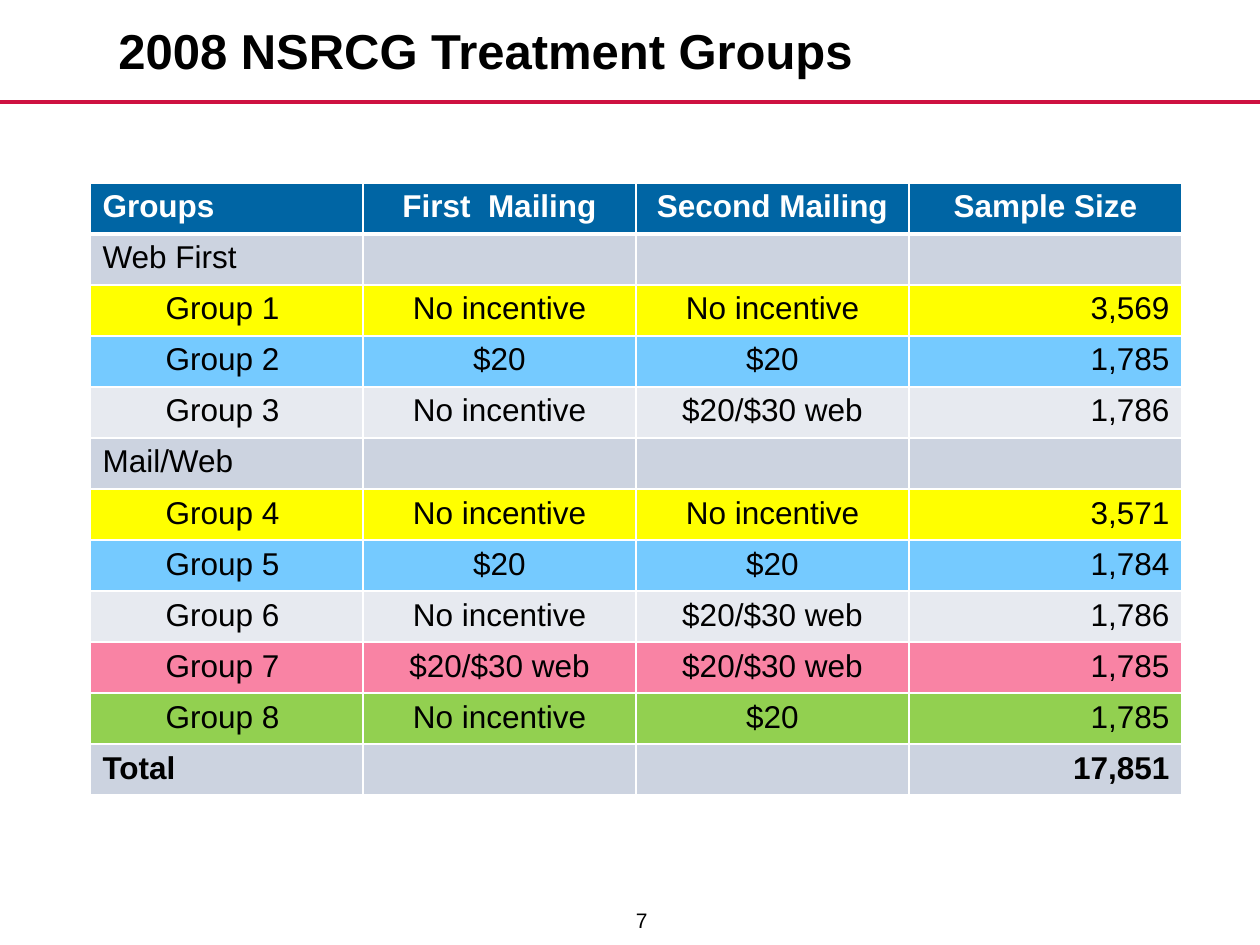
from lxml import etree
from pptx import Presentation
from pptx.dml.color import RGBColor
from pptx.enum.shapes import MSO_CONNECTOR
from pptx.enum.text import MSO_ANCHOR, PP_ALIGN
from pptx.oxml.ns import qn
from pptx.util import Pt

LEFT, CENTER, RIGHT = PP_ALIGN.LEFT, PP_ALIGN.CENTER, PP_ALIGN.RIGHT
MIDDLE = MSO_ANCHOR.MIDDLE
STRAIGHT = MSO_CONNECTOR.STRAIGHT
EMU_PER_PX = 914400 / 126

COLORS = {
    "black": "000000",
    "white": "FFFFFF",
    "rule": "CE1141",
    "header": "0065A4",
    "section": "CCD3E0",
    "plain": "E7EAF0",
    "yellow": "FFFF00",
    "blue": "75CAFF",
    "pink": "F983A4",
    "green": "92D050",
}

NONE, CASH, WEB_BONUS = "No incentive", "$20", "$20/$30 web"
ROWS = [
    ("header", "Groups", "First  Mailing", "Second Mailing", "Sample Size"),
    ("section", "Web First", "", "", ""),
    ("yellow", "Group 1", NONE, NONE, "3,569"),
    ("blue", "Group 2", CASH, CASH, "1,785"),
    ("plain", "Group 3", NONE, WEB_BONUS, "1,786"),
    ("section", "Mail/Web", "", "", ""),
    ("yellow", "Group 4", NONE, NONE, "3,571"),
    ("blue", "Group 5", CASH, CASH, "1,784"),
    ("plain", "Group 6", NONE, WEB_BONUS, "1,786"),
    ("pink", "Group 7", WEB_BONUS, WEB_BONUS, "1,785"),
    ("green", "Group 8", NONE, CASH, "1,785"),
    ("section", "Total", "", "", "17,851"),
]


def px(length):
    return round(length * EMU_PER_PX)


def rgb(name):
    return RGBColor.from_string(COLORS[name])


class SlideBuilder:
    font_name = "Arial"

    def __init__(self, slide):
        self.slide = slide

    def add_words(self, paragraph, text, color="black", align=LEFT, **format_values):
        paragraph.alignment = align
        run = paragraph.add_run()
        run.text = text
        run.font.color.rgb = rgb(color)
        for name, value in {"name": self.font_name, **format_values}.items():
            setattr(run.font, name, value)

    def text(self, box, text, **format_values):
        shape = self.slide.shapes.add_textbox(*map(px, box))
        frame = shape.text_frame
        frame.word_wrap = True
        frame.vertical_anchor = MIDDLE
        self.add_words(frame.paragraphs[0], text, **format_values)

    def line(self, start, end, color, width):
        shape = self.slide.shapes.add_connector(STRAIGHT, *map(px, start + end))
        shape.line.color.rgb = rgb(color)
        shape.line.width = Pt(width)
        etree.SubElement(shape._element.spPr, qn("a:effectLst"))

    def borders(self, cell, widths):
        properties = cell._tc.get_or_add_tcPr()
        for side, width in widths.items():
            line = etree.SubElement(properties, qn(f"a:ln{side}"), w=str(Pt(width)))
            fill = etree.SubElement(line, qn("a:solidFill"))
            etree.SubElement(fill, qn("a:srgbClr"), val=COLORS["white"])

    def table(self, left, top, column_width, row_height, rows):
        columns = len(rows[0]) - 1
        table = self.slide.shapes.add_table(
            len(rows), columns, px(left), px(top),
            px(column_width * columns), px(row_height * len(rows))).table
        for column in table.columns:
            column.width = px(column_width)
        for row_index, (color, *texts) in enumerate(rows):
            table.rows[row_index].height = px(row_height)
            header = row_index == 0
            aligns = (LEFT, CENTER, CENTER, CENTER if header else RIGHT)
            for column_index, (text, align) in enumerate(zip(texts, aligns)):
                cell = table.cell(row_index, column_index)
                self.borders(cell, {
                    "L": 1, "R": 1,
                    "T": 3 if row_index == 1 else 1,
                    "B": 3 if header else 1,
                })
                cell.fill.solid()
                cell.fill.fore_color.rgb = rgb(color)
                paragraph = cell.text_frame.paragraphs[0]
                if text.startswith("Group "):
                    paragraph.level = 1
                    paragraph._p.get_or_add_pPr().set("marL", str(px(63)))
                if text:
                    self.add_words(paragraph, text, "white" if header else "black", align,
                                   size=Pt(18), bold=header or texts[0] == "Total")


def main():
    presentation = Presentation()
    presentation.slide_width = px(1260)
    presentation.slide_height = px(945)
    slide = presentation.slides.add_slide(presentation.slide_layouts[6])
    builder = SlideBuilder(slide)
    builder.line((0, 102), (1260, 102), "rule", 2)
    builder.table(90, 183, 273, 51, ROWS)
    builder.text((106, 4, 1019, 92), "2008 NSRCG Treatment Groups", size=Pt(28), bold=True)
    builder.text((600, 895, 60, 50), "7", align=RIGHT, size=Pt(12))
    presentation.save("out.pptx")


if __name__ == "__main__":
    main()
